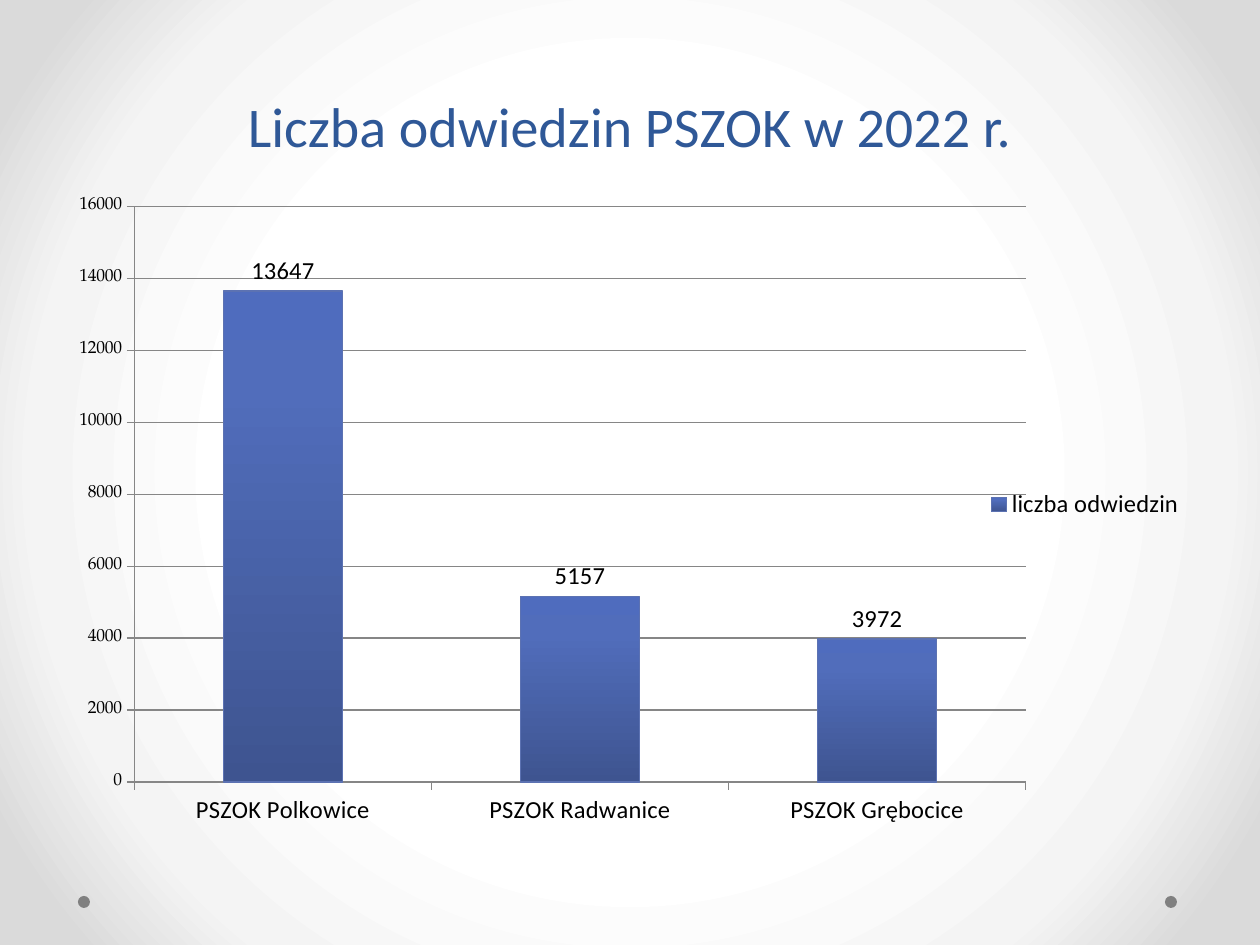
import pptx
import pptx.util
import pptx.chart.data
import pptx.dml.color
import pptx.enum.chart
import pptx.enum.shapes
import pptx.enum.text
import pptx.oxml
import pptx.oxml.ns

# Content
TITLE = "Liczba odwiedzin PSZOK w 2022 r."
SERIES = "liczba odwiedzin"
VISITS = {"PSZOK Polkowice": 13647, "PSZOK Radwanice": 5157, "PSZOK Grębocice": 3972}

# Look
HEX = {"title": "2F5897", "dot": "808080", "text": "000000",
       "edge": "5C72B2", "grid": "868686"}
BACK = [(50, "FFFFFF"), (76, "F4F4F4"), (92, "DADADA")]
BAR = [(0, "3E5490"), (80, "516DBB"), (100, "4F6CBE")]
RING = ('<a:path path="circle"><a:fillToRect l="50000" t="50000" '
        'r="50000" b="50000"/></a:path>')
RISE = '<a:lin ang="16200000" scaled="0"/>'
SANS, SERIF = "Calibri", "TeX Gyre Pagella"

# Places in px
PX = 914400 / 126
LEFT, WIDE = 63, 1134
HEAD, TALL = 165, 679
DOTS, DOT_TOP, DOT = (78, 1165), 896, 12
PLOT = {"x": 0.063, "y": 0.061, "w": 0.786, "h": 0.848}


def emu(*nums):
    return [round(n * PX) for n in nums]


def rgb(name):
    return pptx.dml.color.RGBColor.from_string(HEX[name])


def style(font, size, face, color="text"):
    font.size = pptx.util.Pt(size)
    font.name = face
    font.color.rgb = rgb(color)


def stroke(line, color):
    line.color.rgb = rgb(color)
    line.width = pptx.util.Pt(0.75)


def blend(fill, root, stops, way):
    """Set a gradient with the given stops and direction."""
    fill.gradient()
    old = root.find(".//" + pptx.oxml.ns.qn("a:gradFill"))
    marks = "".join(f'<a:gs pos="{pos * 1000}"><a:srgbClr val="{tone}"/></a:gs>'
                    for pos, tone in stops)
    new = pptx.oxml.parse_xml(
        f'<a:gradFill {pptx.oxml.ns.nsdecls("a")} rotWithShape="1">'
        f'<a:gsLst>{marks}</a:gsLst>{way}</a:gradFill>')
    old.getparent().replace(old, new)


def place(chart):
    """Fix the inner plot area by fractions of the chart."""
    area = chart.plots[0]._element.getparent()
    for old in area.findall(pptx.oxml.ns.qn("c:layout")):
        area.remove(old)
    modes = '<c:xMode val="edge"/><c:yMode val="edge"/>'
    sizes = "".join(f'<c:{key} val="{val}"/>' for key, val in PLOT.items())
    area.insert(0, pptx.oxml.parse_xml(
        f'<c:layout {pptx.oxml.ns.nsdecls("c")}><c:manualLayout>'
        f'<c:layoutTarget val="inner"/>{modes}{sizes}'
        '</c:manualLayout></c:layout>'))


def add_chart(slide):
    kinds = pptx.enum.chart
    data = pptx.chart.data.CategoryChartData()
    data.categories = list(VISITS)
    data.add_series(SERIES, list(VISITS.values()))
    chart = slide.shapes.add_chart(
        kinds.XL_CHART_TYPE.COLUMN_CLUSTERED,
        *emu(LEFT, HEAD, WIDE, TALL), data).chart
    chart.has_title = False
    style(chart.font, 10, SERIF)
    place(chart)

    # Axes
    cat, val = chart.category_axis, chart.value_axis
    for axis in (cat, val):
        axis.major_tick_mark = kinds.XL_TICK_MARK.OUTSIDE
        stroke(axis.format.line, "grid")
    style(cat.tick_labels.font, 14, SANS)
    val.minimum_scale, val.maximum_scale, val.major_unit = 0, 16000, 2000
    val.has_major_gridlines = True
    stroke(val.major_gridlines.format.line, "grid")

    # Legend
    chart.has_legend = True
    chart.legend.position = kinds.XL_LEGEND_POSITION.RIGHT
    chart.legend.include_in_layout = False
    style(chart.legend.font, 14, SANS)

    # Bars and labels
    plot = chart.plots[0]
    plot.gap_width = 150
    plot.vary_by_categories = False
    bars = plot.series[0]
    blend(bars.format.fill, bars._element, BAR, RISE)
    stroke(bars.format.line, "edge")
    tags = bars.data_labels
    tags.show_value = True
    tags.position = kinds.XL_LABEL_POSITION.OUTSIDE_END
    style(tags.font, 14, SANS)


def main():
    deck = pptx.Presentation()
    deck.slide_width, deck.slide_height = emu(1260, 945)
    slide = deck.slides.add_slide(deck.slide_layouts[5])
    blend(slide.background.fill, slide.element, BACK, RING)

    # Corner dots
    for left in DOTS:
        dot = slide.shapes.add_shape(pptx.enum.shapes.MSO_SHAPE.OVAL,
                                     *emu(left, DOT_TOP, DOT, DOT))
        dot.shadow.inherit = False
        dot.fill.solid()
        dot.fill.fore_color.rgb = rgb("dot")
        dot.line.fill.background()

    # Title
    head = slide.shapes.title
    head.left, head.top, head.width, head.height = emu(LEFT, 0, WIDE, HEAD)
    head.text_frame.vertical_anchor = pptx.enum.text.MSO_ANCHOR.BOTTOM
    para = head.text_frame.paragraphs[0]
    para.alignment = pptx.enum.text.PP_ALIGN.CENTER
    run = para.add_run()
    run.text = TITLE
    style(run.font, 32, SANS, "title")

    add_chart(slide)
    deck.save("out.pptx")


if __name__ == "__main__":
    main()
